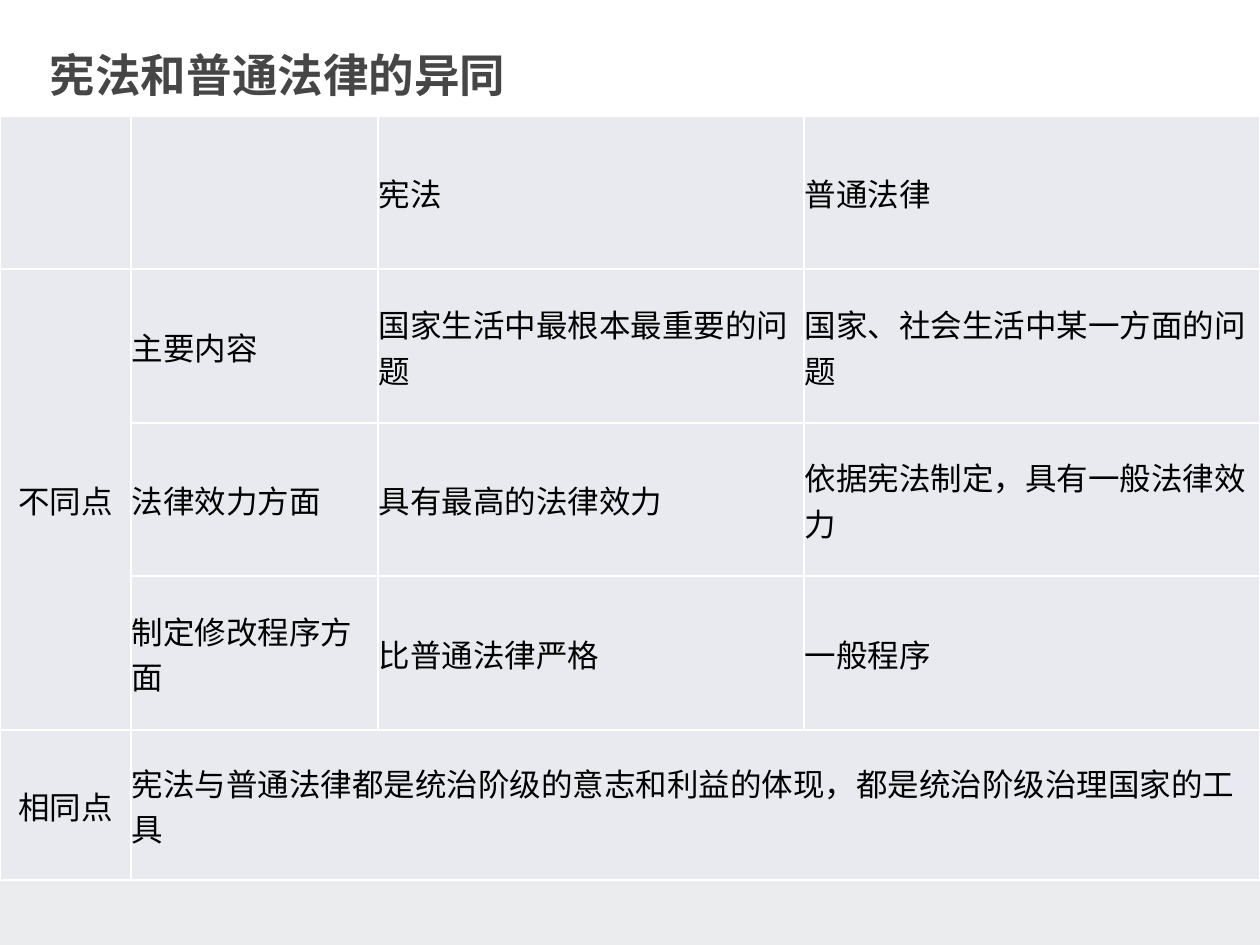
from lxml import etree
from pptx import Presentation
from pptx import util as u
from pptx.dml.color import RGBColor
from pptx.enum import shapes, text
from pptx.oxml.ns import qn

SCALE = 914400 / 126
FONT = "Arial"
COLORS = {"band": "EBECED", "cell": "E8EAEF", "border": "FFFFFF",
          "title": "464646", "body": "000000"}
COLS = [131, 247, 426, 456]
ROWS = [153, 154, 153, 154, 150]
CELLS = [
    ["", "", "宪法", "普通法律"],
    ["不同点", "主要内容", "国家生活中最根本最重要的问题", "国家、社会生活中某一方面的问题"],
    ["", "法律效力方面", "具有最高的法律效力", "依据宪法制定，具有一般法律效力"],
    ["", "制定修改程序方面", "比普通法律严格", "一般程序"],
    ["相同点", "宪法与普通法律都是统治阶级的意志和利益的体现，都是统治阶级治理国家的工具", "", ""],
]
MERGES = [((1, 0), (3, 0)), ((4, 1), (4, 3))]


def px(n):
    return u.Emu(round(n * SCALE))


def rgb(name):
    return RGBColor.from_string(COLORS[name])


def add_run(p, words, size, color, bold=False):
    r = p.add_run()
    r.text = words
    r.font.name = FONT
    r.font.size = u.Pt(size)
    r.font.bold = bold
    r.font.color.rgb = rgb(color)


def add_band(s):
    sp = s.shapes.add_shape(shapes.MSO_SHAPE.RECTANGLE, 0, px(878), px(1260), px(67))
    sp.shadow.inherit = False
    sp.fill.solid()
    sp.fill.fore_color.rgb = rgb("band")
    sp.line.fill.background()


def add_title(s, words):
    tf = s.shapes.add_textbox(px(50), px(47), px(1160), px(54)).text_frame
    tf.word_wrap = True
    tf.margin_left = tf.margin_right = tf.margin_top = tf.margin_bottom = 0
    tf.vertical_anchor = text.MSO_ANCHOR.MIDDLE
    add_run(tf.paragraphs[0], words, 26, "title", True)


def add_borders(cell):
    tc_pr = cell._tc.get_or_add_tcPr()
    for i, side in enumerate(("lnL", "lnR", "lnT", "lnB")):
        ln = etree.Element(qn(f"a:{side}"), w=str(u.Pt(1)))
        fill = etree.SubElement(ln, qn("a:solidFill"))
        etree.SubElement(fill, qn("a:srgbClr"), val=COLORS["border"])
        tc_pr.insert(i, ln)


def fill_cell(cell, words, centered):
    cell.fill.solid()
    cell.fill.fore_color.rgb = rgb("cell")
    cell.margin_left = cell.margin_right = cell.margin_top = px(1)
    cell.margin_bottom = 0
    cell.vertical_anchor = text.MSO_ANCHOR.MIDDLE
    add_borders(cell)
    if words:
        p = cell.text_frame.paragraphs[0]
        p.alignment = text.PP_ALIGN.CENTER if centered else text.PP_ALIGN.LEFT
        add_run(p, words, 18, "body")


def add_comparison(s):
    table = s.shapes.add_table(len(ROWS), len(COLS), 0, px(116),
                               px(sum(COLS)), px(sum(ROWS))).table
    for column, width in zip(table.columns, COLS):
        column.width = px(width)
    for row, height in zip(table.rows, ROWS):
        row.height = px(height)
    for i, row in enumerate(CELLS):
        for j, words in enumerate(row):
            fill_cell(table.cell(i, j), words, j == 0)
    for first, last in MERGES:
        table.cell(*first).merge(table.cell(*last))


def main():
    """Build the slide comparing the constitution with ordinary laws."""
    prs = Presentation()
    prs.slide_width, prs.slide_height = px(1260), px(945)
    s = prs.slides.add_slide(prs.slide_layouts[6])
    add_band(s)
    add_title(s, "宪法和普通法律的异同")
    add_comparison(s)
    prs.save("out.pptx")


if __name__ == "__main__":
    main()
